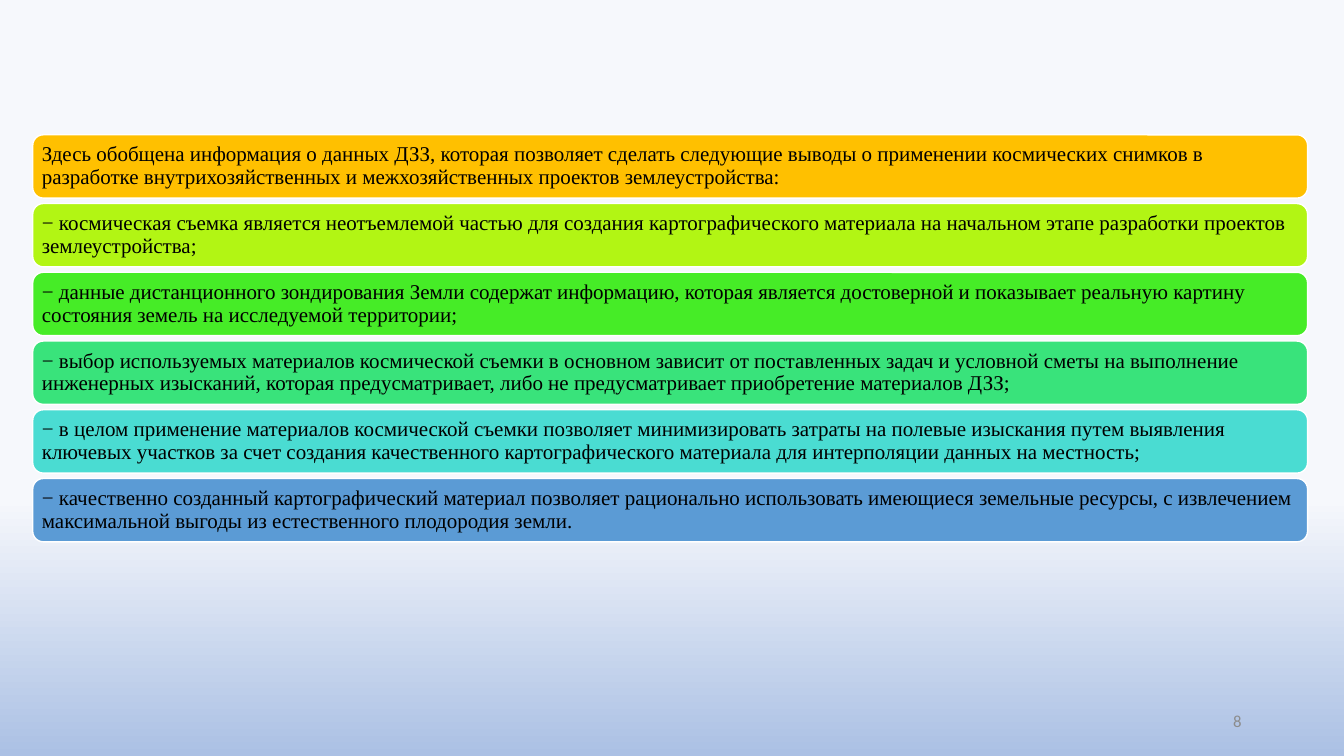
from pptx import Presentation
from pptx.dml.color import RGBColor
from pptx.enum.shapes import MSO_SHAPE as SHAPE
from pptx.enum.text import MSO_ANCHOR as ANCHOR, PP_ALIGN as ALIGN
from pptx.util import Pt

# Content: bar colour and text, top to bottom
BARS = [
    ("amber", "Здесь обобщена информация о данных ДЗЗ, которая позволяет сделать следующие выводы о применении космических снимков в разработке внутрихозяйственных и межхозяйственных проектов землеустройства:"),
    ("lime", "− космическая съемка является неотъемлемой частью для создания картографического материала на начальном этапе разработки проектов землеустройства;"),
    ("green", "− данные дистанционного зондирования Земли содержат информацию, которая является достоверной и показывает реальную картину состояния земель на исследуемой территории;"),
    ("emerald", "− выбор используемых материалов космической съемки в основном зависит от поставленных задач и условной сметы на выполнение инженерных изысканий, которая предусматривает, либо не предусматривает приобретение материалов ДЗЗ;"),
    ("turquoise", "− в целом применение материалов космической съемки позволяет минимизировать затраты на полевые изыскания путем выявления ключевых участков за счет создания качественного картографического материала для интерполяции данных на местность;"),
    ("blue", "− качественно созданный картографический материал позволяет рационально использовать имеющиеся земельные ресурсы, с извлечением максимальной выгоды из естественного плодородия земли."),
]
PAGE_NUMBER = "8"

COLORS = {
    "amber": "FFC000", "lime": "B2F514", "green": "46EC27",
    "emerald": "39E37B", "turquoise": "4ADCD2", "blue": "5B9BD5",
    "white": "FFFFFF", "black": "000000", "gray": "8C8C8C",
    "sky_top": "F6F8FC", "sky_bottom": "ABC0E4",
}
BACKGROUND = [(0.66, "sky_top"), (1, "sky_bottom")]

# Layout in points
SLIDE_W, SLIDE_H = 960, 540
BAR_LEFT, BAR_TOP, BAR_W, BAR_H = 23.4, 96.3, 910.6, 45.2
BAR_PITCH = 49.1
INSET = 4.3

BAR_FRAME = {"word_wrap": True, "vertical_anchor": ANCHOR.MIDDLE} | {
    f"margin_{side}": Pt(INSET) for side in ("left", "right", "top", "bottom")}
BAR_PARA = {"alignment": ALIGN.LEFT, "line_spacing": 0.9}
BAR_FONT = {"name": "Times New Roman", "size": Pt(15)}
NUMBER_FRAME = {"word_wrap": True, "vertical_anchor": ANCHOR.MIDDLE}
NUMBER_PARA = {"alignment": ALIGN.RIGHT}
NUMBER_FONT = {"name": "Calibri", "size": Pt(12)}


def rgb(name):
    return RGBColor.from_string(COLORS[name])


def apply(target, values):
    for name, value in values.items():
        setattr(target, name, value)


def write(sp, text, color, frame, para, font):
    tf = sp.text_frame
    apply(tf, frame)
    p = tf.paragraphs[0]
    apply(p, para)
    r = p.add_run()
    r.text = text
    apply(r.font, font)
    r.font.color.rgb = rgb(color)


def main():
    prs = Presentation()
    prs.slide_width, prs.slide_height = Pt(SLIDE_W), Pt(SLIDE_H)
    s = prs.slides.add_slide(prs.slide_layouts[6])

    # Background gradient, top to bottom
    fill = s.background.fill
    fill.gradient()
    fill.gradient_angle = 270
    for stop, (position, color) in zip(fill.gradient_stops, BACKGROUND):
        stop.position = position
        stop.color.rgb = rgb(color)

    # Page number
    number = s.shapes.add_textbox(Pt(678), Pt(500.5), Pt(216), Pt(28.8))
    write(number, PAGE_NUMBER, "gray", NUMBER_FRAME, NUMBER_PARA, NUMBER_FONT)

    # Conclusion bars
    for i, (color, text) in enumerate(BARS):
        bar = s.shapes.add_shape(
            SHAPE.ROUNDED_RECTANGLE, Pt(BAR_LEFT), Pt(BAR_TOP + i * BAR_PITCH),
            Pt(BAR_W), Pt(BAR_H))
        bar.shadow.inherit = False
        bar.fill.solid()
        bar.fill.fore_color.rgb = rgb(color)
        bar.line.color.rgb = rgb("white")
        bar.line.width = Pt(1)
        write(bar, text, "black", BAR_FRAME, BAR_PARA, BAR_FONT)

    prs.save("out.pptx")


if __name__ == "__main__":
    main()
